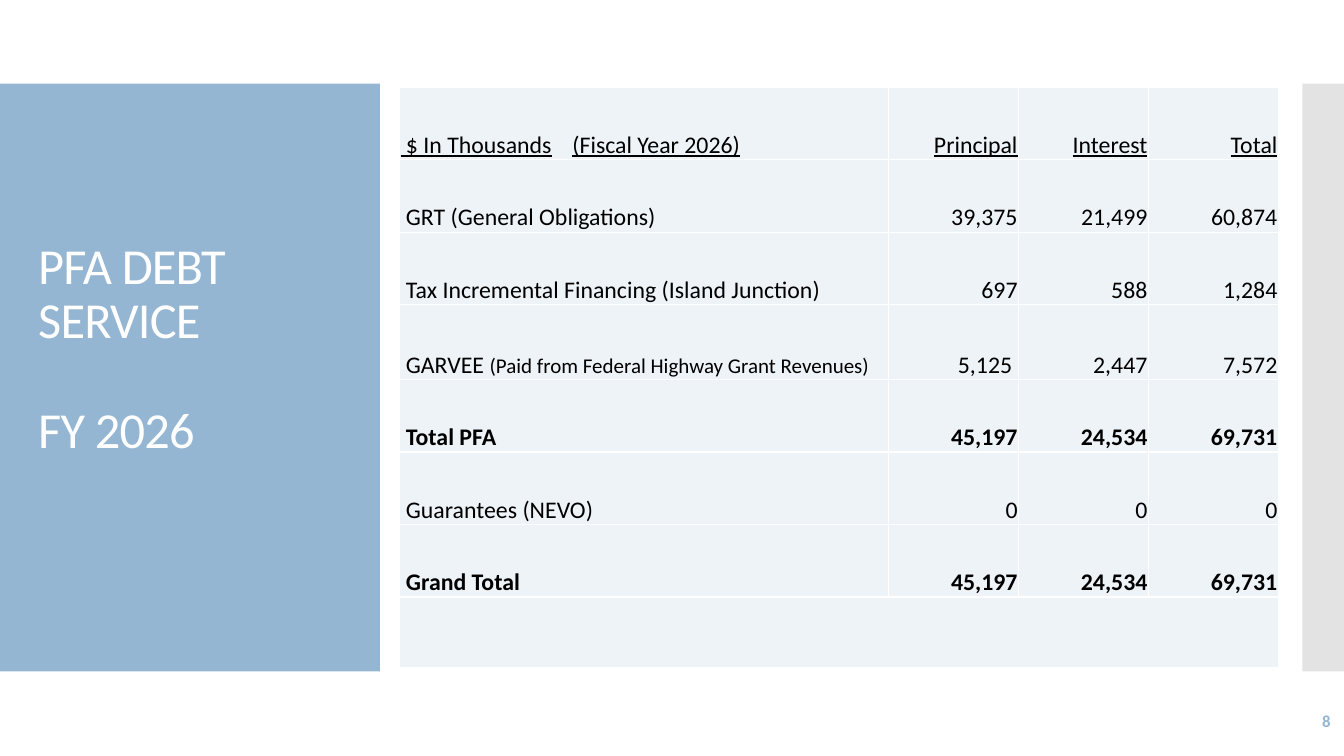
from dataclasses import dataclass

from lxml import etree
from pptx import Presentation
from pptx.dml.color import RGBColor
from pptx.enum import shapes, text
from pptx.oxml import ns
from pptx.util import Pt


@dataclass(frozen=True)
class Theme:
    """Colours, type sizes and font of the slide."""
    blue: str = "94B6D2"
    grey: str = "C8C8C8"
    pale: str = "EEF3F7"
    white: str = "FFFFFF"
    black: str = "000000"
    font: str = "Calibri"
    title: float = 36
    body: float = 17
    note: float = 15
    number: float = 12


THEME = Theme()
HEADINGS = ["Principal", "Interest", "Total"]
DEBTS = [
    ("GRT (General Obligations)", "", ["39,375", "21,499", "60,874"]),
    ("Tax Incremental Financing (Island Junction)", "", ["697", "588", "1,284"]),
    ("GARVEE ", "(Paid from Federal Highway Grant Revenues)", ["5,125", "2,447", "7,572"]),
    ("Total PFA", "", ["45,197", "24,534", "69,731"]),
    ("Guarantees (NEVO)", "", ["0", "0", "0"]),
    ("Grand Total", "", ["45,197", "24,534", "69,731"]),
]
COLUMN_WIDTHS = [349.4, 92.8, 92.8, 92.8]
ROW_HEIGHTS = [51.84, 51.84, 51.84, 53.28, 51.84, 51.84, 51.84, 50.4]
EDGE, INDENT = 0.72, 4.56
FISCAL_YEAR_TAB = 122.8


def add_run(paragraph, words, size, color, bold=False, underline=False):
    """Add one styled run to a paragraph."""
    run = paragraph.add_run()
    run.text = words
    font = run.font
    font.name, font.size = THEME.font, Pt(size)
    font.bold, font.underline = bold, underline
    font.color.rgb = RGBColor.from_string(color)
    return run


def add_panel(slide, box, color, alpha=None):
    """Draw a plain band, optionally see-through."""
    panel = slide.shapes.add_shape(shapes.MSO_SHAPE.RECTANGLE, *map(Pt, box))
    panel.shadow.inherit = False
    panel.fill.solid()
    panel.fill.fore_color.rgb = RGBColor.from_string(color)
    panel.line.fill.background()
    if alpha is not None:
        tint = panel.fill._xPr.find(".//" + ns.qn("a:srgbClr"))
        etree.SubElement(tint, ns.qn("a:alpha"), val=str(alpha * 1000))


def add_frame(slide, box):
    """Add a wrapping, vertically centred text frame."""
    frame = slide.shapes.add_textbox(*map(Pt, box)).text_frame
    frame.word_wrap = True
    frame.vertical_anchor = text.MSO_ANCHOR.MIDDLE
    return frame


def add_title(slide, box):
    """Draw the blue panel with the two-part title."""
    left, top, width, height = box
    add_panel(slide, box, THEME.blue)
    frame = add_frame(slide, (left + 20.2, top + 28.8, width - 39.6, height - 57.6))
    line = THEME.title * 1.22 * 0.9
    frame.margin_bottom = Pt(3.6 + line)
    for index, words in enumerate(["PFA DEBT SERVICE", "FY 2026"]):
        paragraph = frame.add_paragraph() if index else frame.paragraphs[0]
        paragraph.line_spacing = 0.9
        paragraph.space_before = Pt(line * index)
        run = add_run(paragraph, words, THEME.title, THEME.white)
        run.font._element.set("spc", "-60")


def style_cell(cell, left=EDGE, right=EDGE):
    """Give a cell its margins, white borders and pale fill."""
    cell.margin_left, cell.margin_right = Pt(left), Pt(right)
    cell.margin_top, cell.margin_bottom = Pt(EDGE), 0
    cell.vertical_anchor = text.MSO_ANCHOR.BOTTOM
    properties = cell._tc.get_or_add_tcPr()
    for index, side in enumerate(["lnL", "lnR", "lnT", "lnB"]):
        border = etree.Element(ns.qn("a:" + side), w=str(Pt(1)))
        fill = etree.SubElement(border, ns.qn("a:solidFill"))
        etree.SubElement(fill, ns.qn("a:srgbClr"), val=THEME.white)
        properties.insert(index, border)
    cell.fill.solid()
    cell.fill.fore_color.rgb = RGBColor.from_string(THEME.pale)


def add_amounts(cells, amounts, **style):
    """Fill the right-aligned cells of a row."""
    for cell, amount in zip(cells, amounts):
        paragraph = cell.text_frame.paragraphs[0]
        paragraph.alignment = text.PP_ALIGN.RIGHT
        add_run(paragraph, amount, THEME.body, THEME.black, **style)


def add_header(cells):
    """Fill the underlined heading row."""
    paragraph = cells[0].text_frame.paragraphs[0]
    tabs = etree.SubElement(paragraph._p.get_or_add_pPr(), ns.qn("a:tabLst"))
    etree.SubElement(tabs, ns.qn("a:tab"), pos=str(Pt(FISCAL_YEAR_TAB)), algn="l")
    add_run(paragraph, " $ In Thousands\t(Fiscal Year 2026)", THEME.body, THEME.black, underline=True)
    add_amounts(cells[1:], HEADINGS, underline=True)


def add_debt_table(slide, left, top):
    """Draw the debt service table from its top left corner."""
    box = (left, top, sum(COLUMN_WIDTHS), sum(ROW_HEIGHTS))
    table = slide.shapes.add_table(len(ROW_HEIGHTS), len(COLUMN_WIDTHS), *map(Pt, box)).table
    table.first_row = table.horz_banding = False
    for column, width in zip(table.columns, COLUMN_WIDTHS):
        column.width = Pt(width)
    for row_index, (row, height) in enumerate(zip(table.rows, ROW_HEIGHTS)):
        row.height = Pt(height)
        for column_index, cell in enumerate(row.cells):
            label = row_index > 0 and column_index == 0
            garvee_principal = (row_index, column_index) == (3, 1)
            style_cell(cell, INDENT if label else EDGE, INDENT if garvee_principal else EDGE)
    rows = [list(row.cells) for row in table.rows]
    add_header(rows[0])
    for cells, (debt, note, amounts) in zip(rows[1:], DEBTS):
        bold = "Total" in debt
        paragraph = cells[0].text_frame.paragraphs[0]
        add_run(paragraph, debt, THEME.body, THEME.black, bold=bold)
        if note:
            add_run(paragraph, note, THEME.note, THEME.black)
        add_amounts(cells[1:], amounts, bold=bold)
    rows[-1][0].merge(rows[-1][-1])


def add_page_number(slide, box):
    """Write the page number at the right of its box."""
    paragraph = add_frame(slide, box).paragraphs[0]
    paragraph.alignment = text.PP_ALIGN.RIGHT
    add_run(paragraph, "8", THEME.number, THEME.blue, bold=True)


def main():
    """Build and save the slide."""
    deck = Presentation()
    deck.slide_width, deck.slide_height = Pt(960), Pt(540)
    slide = deck.slides.add_slide(deck.slide_layouts[6])
    add_panel(slide, (930.2, 59.8, 29.8, 419.8), THEME.grey, alpha=50)
    add_title(slide, (0, 59.8, 271.4, 419.8))
    add_page_number(slide, (837.4, 500.4, 120.2, 28.8))
    add_debt_table(slide, 285.4, 62.3)
    deck.save("out.pptx")


if __name__ == "__main__":
    main()
